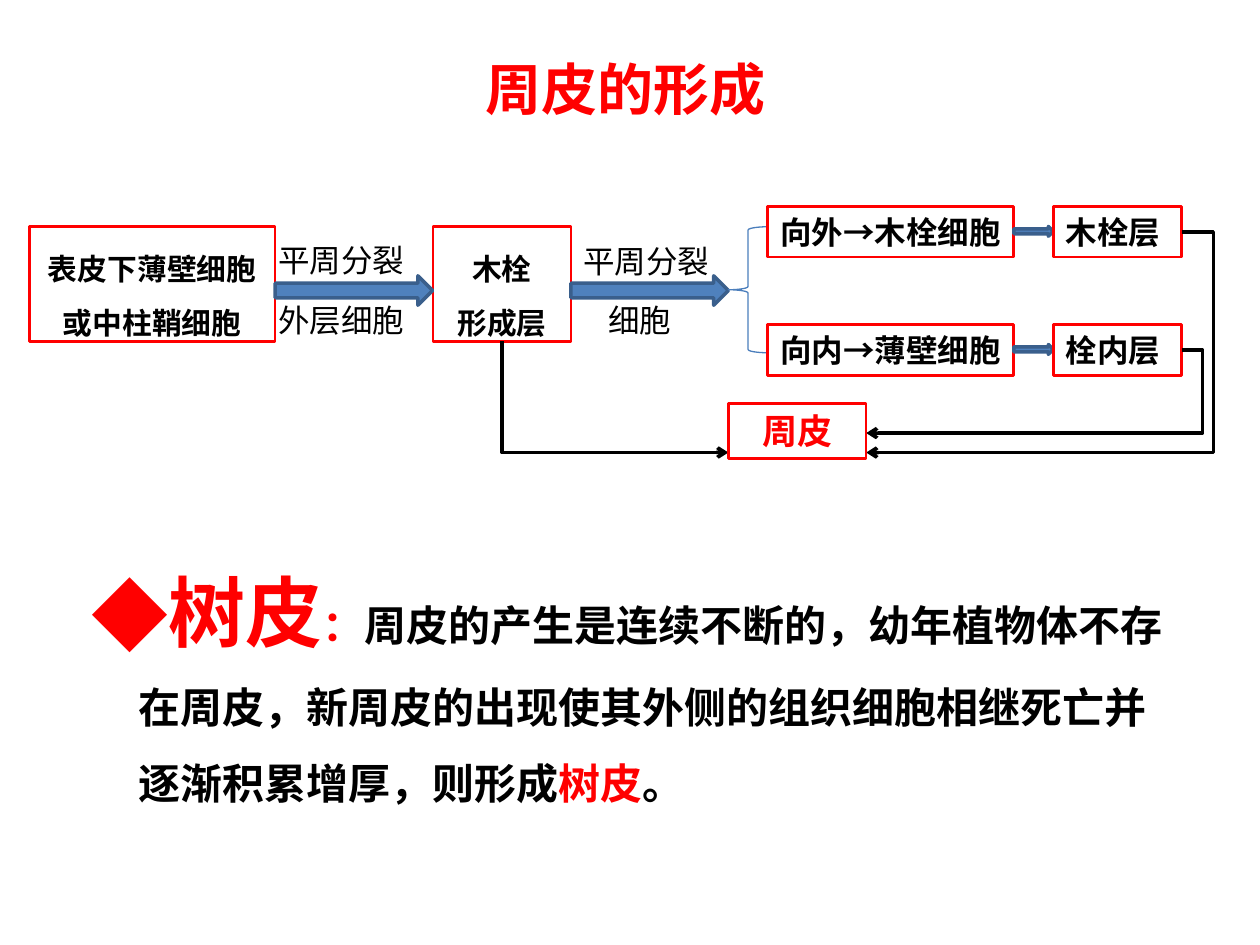
from dataclasses import dataclass

from lxml import etree
from pptx import Presentation
from pptx.dml.color import RGBColor
from pptx.enum.shapes import MSO_CONNECTOR, MSO_SHAPE
from pptx.enum.text import MSO_ANCHOR, MSO_AUTO_SIZE, PP_ALIGN
from pptx.oxml.ns import qn
from pptx.util import Pt

RED = RGBColor(0xFF, 0x00, 0x00)
BLACK = RGBColor(0x00, 0x00, 0x00)
ARROW_FILL = RGBColor(0x4F, 0x81, 0xBD)
ARROW_LINE = RGBColor(0x3A, 0x5F, 0x8C)
BRACE_LINE = RGBColor(0x4B, 0x7E, 0xBC)
HEADING_FONT, DIAGRAM_FONT = "Noto Sans CJK SC", "Calibri"
RECTANGLE, RIGHT_ARROW, LEFT_BRACE = (
    MSO_SHAPE.RECTANGLE, MSO_SHAPE.RIGHT_ARROW, MSO_SHAPE.LEFT_BRACE)
ELBOW = MSO_CONNECTOR.ELBOW
LEFT, CENTER = PP_ALIGN.LEFT, PP_ALIGN.CENTER
TOP, MIDDLE = MSO_ANCHOR.TOP, MSO_ANCHOR.MIDDLE
NO_AUTOFIT = MSO_AUTO_SIZE.NONE

# Shared diagram positions, in points
STAGE_TOP, STAGE_HEIGHT = 129.6, 65.5
ARROW_TOP, ARROW_WIDTH, ARROW_HEIGHT = 157.6, 90, 16.8
SOURCE_LEFT, SOURCE_WIDTH = 16.8, 140.4
CAMBIUM_LEFT, CAMBIUM_WIDTH = 247.5, 78.75
BRACE_LEFT, BRACE_WIDTH, BRACE_HEIGHT = 416.25, 22.5, 72
CELL_LEFT, CELL_WIDTH = 438.75, 140.6
LAYER_LEFT, LAYER_WIDTH = 601.9, 73.4
BRANCH_HEIGHT, BRANCH_ARROW_HEIGHT = 28.9, 5.6
OUTER_TOP, INNER_TOP = 118.1, 185.6
PERIDERM_LEFT, PERIDERM_TOP, PERIDERM_WIDTH = 416.25, 230.4, 78.75


@dataclass
class Label:
    lines: list[str]
    left: float
    top: float
    width: float
    height: float
    size: float = 18
    align: PP_ALIGN = LEFT
    spacing: float = 1.0
    font: str = DIAGRAM_FONT
    color: RGBColor = BLACK
    bold: bool = True
    wrap: bool = True


@dataclass
class Route:
    start: tuple[float, float]
    end: tuple[float, float]
    bend: float  # share of the width at which the line turns


def set_format(target, values: dict) -> None:
    for name, value in values.items():
        setattr(target, name, value)


def style_run(run, size: float, font: str, color: RGBColor, bold: bool) -> None:
    set_format(run.font, {"size": Pt(size), "name": font, "bold": bold})
    run.font.color.rgb = color


def place(shape, left: float, top: float, width: float, height: float) -> None:
    set_format(shape, {"left": Pt(left), "top": Pt(top),
                       "width": Pt(width), "height": Pt(height)})


def fill_label(shape, label: Label) -> None:
    frame = shape.text_frame
    set_format(frame, {"word_wrap": label.wrap, "auto_size": NO_AUTOFIT,
                       "vertical_anchor": TOP})
    for index, line in enumerate(label.lines):
        paragraph = frame.add_paragraph() if index else frame.paragraphs[0]
        set_format(paragraph, {"alignment": label.align,
                               "line_spacing": label.spacing})
        run = paragraph.add_run()
        run.text = line
        style_run(run, label.size, label.font, label.color, label.bold)


def add_outline(slide, kind, left: float, top: float, width: float, height: float,
                line: RGBColor, weight: float, fill: RGBColor | None = None):
    shape = slide.shapes.add_shape(kind, Pt(left), Pt(top), Pt(width), Pt(height))
    shape.shadow.inherit = False
    if fill is None:
        shape.fill.background()
    else:
        shape.fill.solid()
        shape.fill.fore_color.rgb = fill
    shape.line.color.rgb = line
    shape.line.width = Pt(weight)
    return shape


def add_box(slide, label: Label) -> None:
    box = add_outline(slide, RECTANGLE, label.left, label.top, label.width,
                      label.height, RED, 1.5)
    fill_label(box, label)


def add_caption(slide, label: Label) -> None:
    caption = slide.shapes.add_textbox(
        Pt(label.left), Pt(label.top), Pt(label.width), Pt(label.height))
    fill_label(caption, label)


def add_route(slide, route: Route) -> None:
    connector = slide.shapes.add_connector(
        ELBOW, *(Pt(value) for value in route.start + route.end))
    connector.line.color.rgb = BLACK
    connector.line.width = Pt(2)
    properties = connector._element.spPr
    guides = properties.find(qn("a:prstGeom")).get_or_add_avLst()
    etree.SubElement(guides, qn("a:gd"), name="adj1",
                     fmla=f"val {round(route.bend * 100000)}")
    etree.SubElement(properties.find(qn("a:ln")), qn("a:tailEnd"), type="arrow")
    etree.SubElement(properties, qn("a:effectLst"))


def add_diagram(slide) -> None:
    # Successive stages
    stage = {"size": 17, "align": CENTER, "spacing": 1.5}
    add_box(slide, Label(["表皮下薄壁细胞", "或中柱鞘细胞"], SOURCE_LEFT, STAGE_TOP,
                         SOURCE_WIDTH, STAGE_HEIGHT, **stage))
    add_box(slide, Label(["木栓", "形成层"], CAMBIUM_LEFT, STAGE_TOP,
                         CAMBIUM_WIDTH, STAGE_HEIGHT, **stage))
    for left in (SOURCE_LEFT + SOURCE_WIDTH, CAMBIUM_LEFT + CAMBIUM_WIDTH):
        add_outline(slide, RIGHT_ARROW, left, ARROW_TOP, ARROW_WIDTH, ARROW_HEIGHT,
                    ARROW_LINE, 2, ARROW_FILL)

    # Captions above and below the arrows
    for text, left, top, width, align in (
            ("平周分裂", 152, 134, 90, LEFT),
            ("外层细胞", 152, 168.5, 90, LEFT),
            ("平周分裂", 326.25, 134.5, 90, LEFT),
            ("细胞", 326.25, 168.5, 78.75, CENTER)):
        add_caption(slide, Label([text], left, top, width, BRANCH_HEIGHT,
                                 align=align, bold=False))

    # Outward and inward branches
    add_outline(slide, LEFT_BRACE, BRACE_LEFT, STAGE_TOP, BRACE_WIDTH, BRACE_HEIGHT,
                BRACE_LINE, 0.75)
    for cells, layer, top, arrow_top in (
            ("向外→木栓细胞", "木栓层", OUTER_TOP, 129.4),
            ("向内→薄壁细胞", "栓内层", INNER_TOP, 196.9)):
        add_box(slide, Label([cells], CELL_LEFT, top, CELL_WIDTH, BRANCH_HEIGHT,
                             wrap=False))
        add_outline(slide, RIGHT_ARROW, CELL_LEFT + CELL_WIDTH, arrow_top,
                    LAYER_LEFT - CELL_LEFT - CELL_WIDTH, BRANCH_ARROW_HEIGHT,
                    ARROW_LINE, 2, ARROW_FILL)
        add_box(slide, Label([layer], LAYER_LEFT, top, LAYER_WIDTH, BRANCH_HEIGHT))

    # Three tissues that make up the periderm
    layer_right = LAYER_LEFT + LAYER_WIDTH
    periderm_right = PERIDERM_LEFT + PERIDERM_WIDTH
    lower_entry, upper_entry = 258.6, 247.5
    for route in (
            Route((CAMBIUM_LEFT + CAMBIUM_WIDTH / 2, STAGE_TOP + STAGE_HEIGHT),
                  (PERIDERM_LEFT, lower_entry), 0),
            Route((layer_right, OUTER_TOP + BRANCH_HEIGHT / 2),
                  (periderm_right, lower_entry), -0.1),
            Route((layer_right, INNER_TOP + BRANCH_HEIGHT / 2),
                  (periderm_right, upper_entry), -0.066)):
        add_route(slide, route)
    add_box(slide, Label(["周皮"], PERIDERM_LEFT, PERIDERM_TOP, PERIDERM_WIDTH, 31.5,
                         size=20, align=CENTER, font=HEADING_FONT, color=RED))


def add_definition(body) -> None:
    place(body, 45, 292.5, 630, 180)
    set_format(body.text_frame, {"word_wrap": True, "auto_size": NO_AUTOFIT,
                                 "vertical_anchor": TOP})
    paragraph = body.text_frame.paragraphs[0]
    set_format(paragraph, {"alignment": LEFT, "line_spacing": 1.5,
                           "space_before": Pt(0)})
    for text, size, color in (
            ("树皮", 44, RED),
            ("：", 24, RED),
            ("周皮的产生是连续不断的，幼年植物体不存在周皮，新周皮的出现使其外侧的组织细胞"
             "相继死亡并逐渐积累增厚，则形成", 24, BLACK),
            ("树皮", 24, RED),
            ("。", 24, BLACK)):
        run = paragraph.add_run()
        run.text = text
        style_run(run, size, HEADING_FONT, color, True)

    # Diamond bullet with a hanging indent
    properties = paragraph._p.get_or_add_pPr()
    properties.set("marL", str(Pt(27)))
    properties.set("indent", str(Pt(-27)))
    bullet_color = etree.SubElement(properties, qn("a:buClr"))
    etree.SubElement(bullet_color, qn("a:srgbClr"), val=str(RED))
    etree.SubElement(properties, qn("a:buFont"), typeface=HEADING_FONT)
    etree.SubElement(properties, qn("a:buChar"), char="◆")


def main() -> None:
    deck = Presentation()
    set_format(deck, {"slide_width": Pt(720), "slide_height": Pt(540)})
    slide = deck.slides.add_slide(deck.slide_layouts[1])

    # Title
    title = slide.shapes.title
    place(title, 33.75, 16.5, 648, 67.5)
    title.text_frame.vertical_anchor = MIDDLE
    heading = title.text_frame.paragraphs[0]
    heading.alignment = CENTER
    run = heading.add_run()
    run.text = "周皮的形成"
    style_run(run, 32, HEADING_FONT, RED, True)

    add_diagram(slide)
    add_definition(slide.placeholders[1])
    deck.save("out.pptx")


if __name__ == "__main__":
    main()
